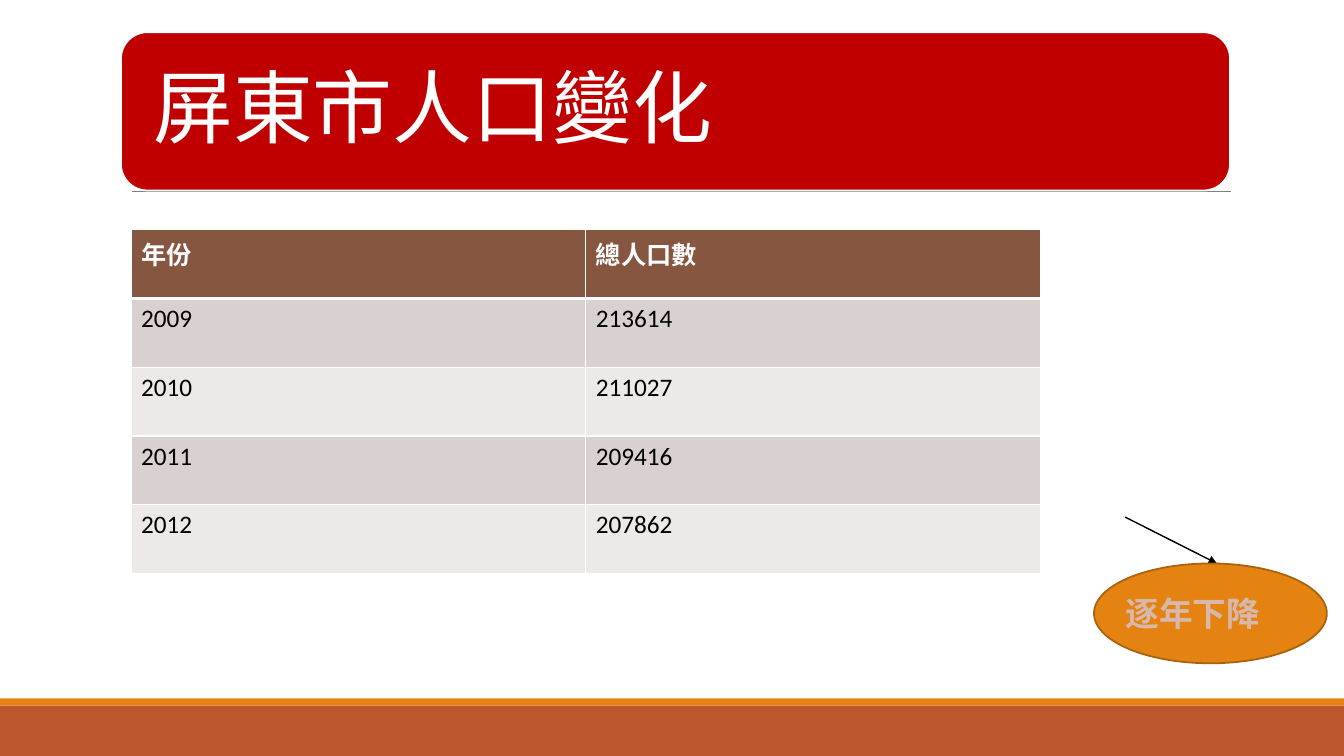
from pptx import Presentation
from pptx.dml.color import RGBColor
from pptx.enum.shapes import MSO_CONNECTOR, MSO_SHAPE
from pptx.enum.text import MSO_ANCHOR, PP_ALIGN
from pptx.oxml.ns import qn
from pptx.util import Inches, Pt
from lxml.etree import SubElement

FONT = "Calibri"
WHITE = RGBColor(0xFF, 0xFF, 0xFF)
BLACK = RGBColor(0, 0, 0)
GRAY = RGBColor(0x80, 0x80, 0x80)
RED = RGBColor(0xC0, 0, 0)
RUST = RGBColor(0xBD, 0x58, 0x2C)
ORANGE = RGBColor(0xE4, 0x83, 0x12)
DARK_ORANGE = RGBColor(0xA9, 0x61, 0x0D)
BROWN = RGBColor(0x86, 0x56, 0x40)
PINK = RGBColor(0xD7, 0xB8, 0xAB)
BAND_DARK = RGBColor(0xD9, 0xD1, 0xCF)
BAND_LIGHT = RGBColor(0xED, 0xE9, 0xE8)

POPULATION = [
    ("年份", "總人口數"),
    ("2009", "213614"),
    ("2010", "211027"),
    ("2011", "209416"),
    ("2012", "207862"),
]


def add_filled_shape(slide, kind, box, fill, line=None):
    shape = slide.shapes.add_shape(kind, *map(Inches, box))
    shape.shadow.inherit = False
    shape.fill.solid()
    shape.fill.fore_color.rgb = fill
    if line is None:
        shape.line.fill.background()
    else:
        shape.line.color.rgb = line
        shape.line.width = Pt(1.25)
    return shape


def add_line(slide, start, end, color, width):
    line = slide.shapes.add_connector(
        MSO_CONNECTOR.STRAIGHT, *map(Inches, (*start, *end)))
    line.line.color.rgb = color
    line.line.width = Pt(width)
    SubElement(line.element.spPr, qn("a:effectLst"))
    return line


def format_text(text_frame, size, color, bold=False, align=PP_ALIGN.LEFT):
    for paragraph in text_frame.paragraphs:
        paragraph.alignment = align
        for run in paragraph.runs:
            run.font.name = FONT
            run.font.size = Pt(size)
            run.font.bold = bold
            run.font.color.rgb = color


def add_footer_band(slide, left, top, width, height):
    stripe = 0.07
    add_filled_shape(slide, MSO_SHAPE.RECTANGLE,
                     (left, top + stripe, width, height - stripe), RUST)
    add_filled_shape(slide, MSO_SHAPE.RECTANGLE, (left, top, width, stripe), ORANGE)


def add_title_banner(slide, left, top, width, height):
    """Draw the banner and its rule, and lay the title placeholder over them."""
    rule_top = top + height + 0.01
    add_line(slide, (left + 0.11, rule_top), (left + width + 0.01, rule_top), GRAY, 0.5)
    banner = add_filled_shape(slide, MSO_SHAPE.ROUNDED_RECTANGLE,
                              (left, top, width, height), RED, WHITE)
    title = slide.shapes.title
    banner.element.addnext(title.element)
    inset = 0.08
    title.left, title.top = Inches(left + inset), Inches(top + inset)
    title.width, title.height = Inches(width - 2 * inset), Inches(height - 2 * inset)
    frame = title.text_frame
    frame.text = "屏東市人口變化"
    frame.vertical_anchor = MSO_ANCHOR.MIDDLE
    frame.margin_left = frame.margin_right = Inches(0.24)
    frame.margin_top = frame.margin_bottom = Inches(0.24)
    frame.paragraphs[0].line_spacing = 0.9
    format_text(frame, 57, WHITE)


def set_cell_borders(cell, widths):
    properties = cell._tc.get_or_add_tcPr()
    for side, width in widths.items():
        line = SubElement(properties, qn(f"a:ln{side}"), w=str(Pt(width)))
        fill = SubElement(line, qn("a:solidFill"))
        SubElement(fill, qn("a:srgbClr"), val=str(WHITE))


def add_population_table(slide, left, top, width, height):
    frame = slide.shapes.add_table(len(POPULATION), len(POPULATION[0]),
                                   *map(Inches, (left, top, width, height)))
    for row_index, values in enumerate(POPULATION):
        header = row_index == 0
        band = BAND_DARK if row_index % 2 else BAND_LIGHT
        top_width = 3 if row_index == 1 else 1
        bottom_width = 3 if header else 1
        for column_index, value in enumerate(values):
            cell = frame.table.cell(row_index, column_index)
            set_cell_borders(cell, {"L": 1, "R": 1, "T": top_width, "B": bottom_width})
            cell.fill.solid()
            cell.fill.fore_color.rgb = BROWN if header else band
            cell.text_frame.text = value
            format_text(cell.text_frame, 18, WHITE if header else BLACK, bold=header)


def add_trend_callout(slide, left, top, width, height):
    """Draw the arrow, the ellipse below it and the label, set right of its left edge."""
    arrow = add_line(slide, (left + 0.31, top - 0.46), (left + 1.22, top), BLACK, 1)
    SubElement(arrow.line._get_or_add_ln(), qn("a:tailEnd"), type="triangle")
    add_filled_shape(slide, MSO_SHAPE.OVAL, (left, top, width, height),
                     ORANGE, DARK_ORANGE)
    label = slide.shapes.add_textbox(
        *map(Inches, (left - 0.86, top + 0.24, 3.68, 0.5)))
    label.text_frame.word_wrap = True
    label.text_frame.text = "逐年下降"
    format_text(label.text_frame, 24, PINK, bold=True, align=PP_ALIGN.CENTER)


def main():
    presentation = Presentation()
    presentation.slide_width = Inches(13.33)
    presentation.slide_height = Inches(7.5)
    slide = presentation.slides.add_slide(presentation.slide_layouts[5])
    add_footer_band(slide, 0, 6.93, 13.33, 0.57)
    add_title_banner(slide, 1.2, 0.32, 11, 1.57)
    add_trend_callout(slide, 10.85, 5.59, 2.31, 0.99)
    add_population_table(slide, 1.3, 2.28, 9.02, 3.41)
    presentation.save("out.pptx")


if __name__ == "__main__":
    main()
